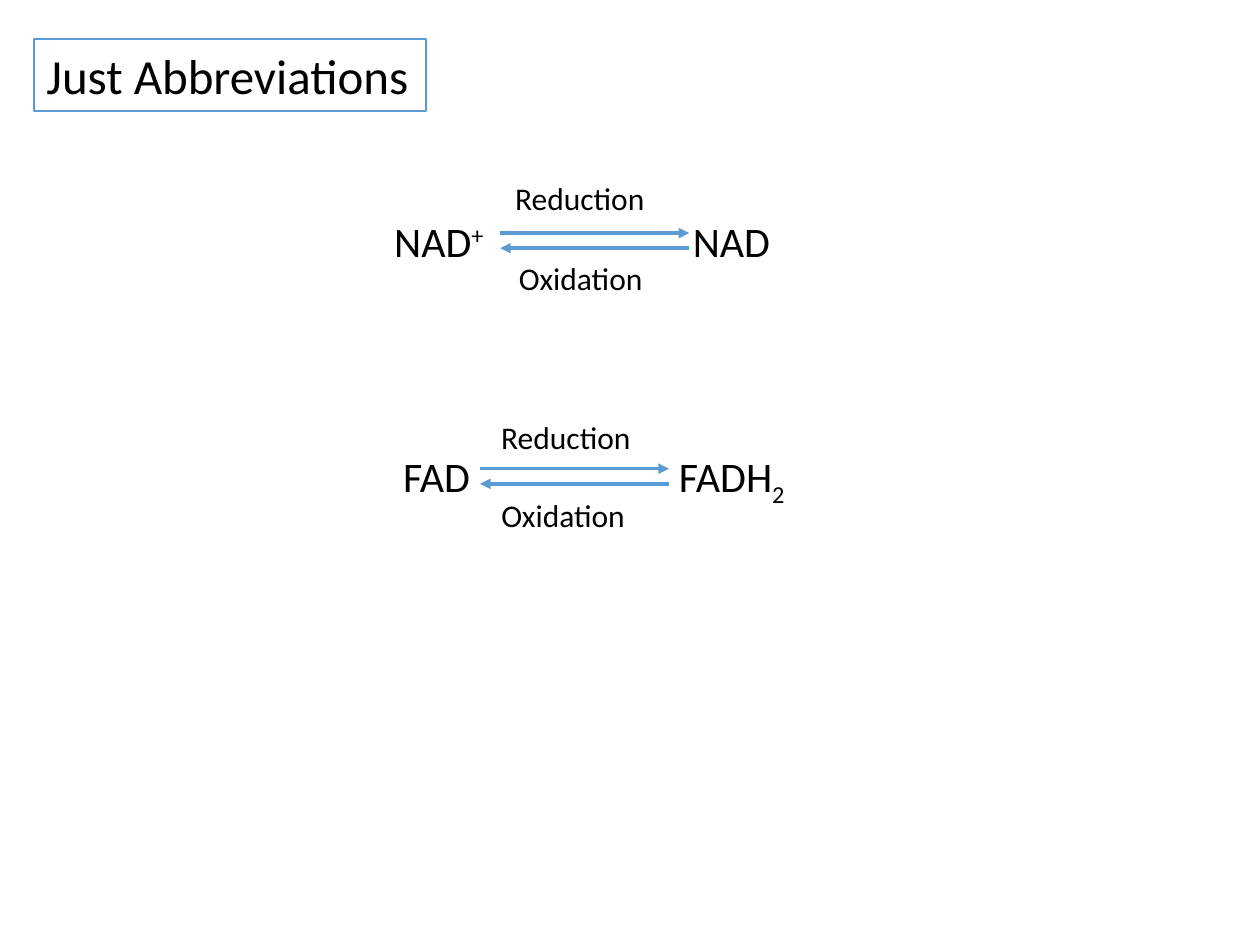
from dataclasses import dataclass

from lxml.etree import SubElement
from pptx import Presentation
from pptx.dml.color import RGBColor as Rgb
from pptx.enum.shapes import MSO_CONNECTOR as Link, MSO_SHAPE as Shape
from pptx.enum.text import MSO_ANCHOR as Anchor, PP_ALIGN as Align
from pptx.oxml.ns import qn
from pptx.util import Inches, Pt


@dataclass(frozen=True)
class Theme:
    font: str = "Calibri"
    ink: Rgb = Rgb(0, 0, 0)
    paper: Rgb = Rgb(255, 255, 255)
    blue: Rgb = Rgb(0x5B, 0x9B, 0xD5)
    title: int = 28
    term: int = 24
    label: int = 18
    arrow: float = 2
    frame: float = 1


@dataclass(frozen=True)
class Piece:
    text: str
    shift: int = 0  # baseline shift in percent


@dataclass(frozen=True)
class Pair:
    terms: tuple[Piece, ...]
    left: float
    top: float
    width: float
    tab: float  # start of the product, from the text edge
    arrow: float  # left end of the arrows
    upper: tuple[float, float]
    lower: tuple[float, float]


THEME = Theme()
SPAN, DROP, GAP = 1.5, 0.19, 0.12  # arrow length, offset and spacing

PAIRS = (
    Pair((Piece("NAD"), Piece("+", 30), Piece("\tNAD")),
         3.03, 1.66, 3.21, 2.37, 3.97, (3.99, 1.37), (4.02, 2.01)),
    Pair((Piece("FAD\tFADH"), Piece("2", -25)),
         3.1, 3.53, 3.25, 2.19, 3.81, (3.88, 3.27), (3.88, 3.89)),
)


def style(run, size: int) -> None:
    run.font.name = THEME.font
    run.font.size = Pt(size)
    run.font.color.rgb = THEME.ink


def add_text(shapes, left: float, top: float, width: float, height: float,
             pieces: tuple[Piece, ...], size: int, wrap: bool = False):
    box = shapes.add_textbox(*map(Inches, (left, top, width, height)))
    box.text_frame.word_wrap = wrap
    para = box.text_frame.paragraphs[0]
    for piece in pieces:
        run = para.add_run()
        run.text = piece.text
        style(run, size)
        if piece.shift:
            run.font._element.set("baseline", str(piece.shift * 1000))
    return para


def add_tab(para, place: float) -> None:
    stops = SubElement(para._p.get_or_add_pPr(), qn("a:tabLst"))
    SubElement(stops, qn("a:tab"), pos=str(Inches(place)), algn="l")


def add_arrow(shapes, start: float, end: float, y: float) -> None:
    line = shapes.add_connector(
        Link.STRAIGHT, Inches(start), Inches(y), Inches(end), Inches(y))
    line.line.color.rgb = THEME.blue
    line.line.width = Pt(THEME.arrow)
    SubElement(line.line._get_or_add_ln(), qn("a:tailEnd"), type="triangle")
    SubElement(line._element.spPr, qn("a:effectLst"))


def add_title(shapes, text: str) -> None:
    box = shapes.add_shape(
        Shape.RECTANGLE, *map(Inches, (0.27, 0.31, 3.11, 0.57)))
    box.shadow.inherit = False
    box.fill.solid()
    box.fill.fore_color.rgb = THEME.paper
    box.line.color.rgb = THEME.blue
    box.line.width = Pt(THEME.frame)
    frame = box.text_frame
    frame.text = text
    frame.word_wrap = False
    frame.vertical_anchor = Anchor.TOP
    frame.paragraphs[0].alignment = Align.LEFT
    style(frame.paragraphs[0].runs[0], THEME.title)


def add_pair(slide, pair: Pair) -> None:
    shapes = slide.shapes.add_group_shape().shapes
    # Both forms of the carrier, set apart by a tab stop
    para = add_text(shapes, pair.left, pair.top, pair.width, 0.5,
                    pair.terms, THEME.term, wrap=True)
    add_tab(para, pair.tab)
    # Forward and backward arrows
    y, end = pair.top + DROP, pair.arrow + SPAN
    add_arrow(shapes, pair.arrow, end, y)
    add_arrow(shapes, end, pair.arrow, y + GAP)
    # Arrow labels
    add_text(shapes, *pair.upper, 1.24, 0.4, (Piece("Reduction"),), THEME.label)
    add_text(shapes, *pair.lower, 1.19, 0.4, (Piece("Oxidation"),), THEME.label)


def main() -> None:
    deck = Presentation()
    deck.slide_width, deck.slide_height = Inches(10), Inches(7.5)
    slide = deck.slides.add_slide(deck.slide_layouts[6])
    add_title(slide.shapes, "Just Abbreviations")
    for pair in PAIRS:
        add_pair(slide, pair)
    deck.save("out.pptx")


if __name__ == "__main__":
    main()
